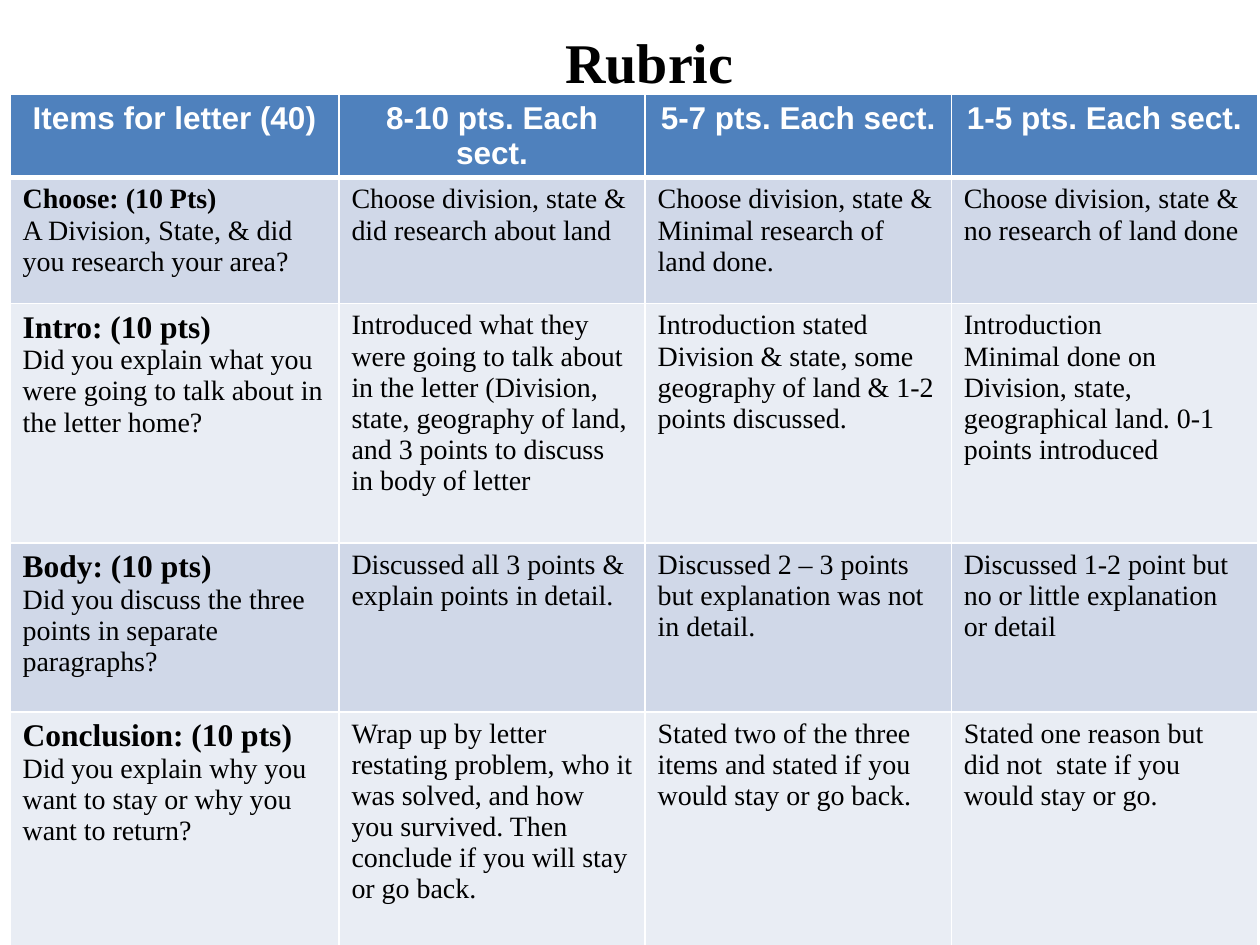
from lxml.etree import SubElement
from pptx import Presentation
from pptx.dml.color import RGBColor
from pptx.enum.text import MSO_ANCHOR as Anchor, PP_ALIGN as Align
from pptx.oxml.ns import qn
from pptx.util import Inches, Pt

SERIF, SANS = "Times New Roman", "Arial"
BLACK, WHITE, BLUE = "000000", "FFFFFF", "4F81BD"
BANDS = ["D0D8E8", "E9EDF4"]

# Table grid, in inches
LEFT, TOP = 0.08, 0.75
COLS = [2.61, 2.43, 2.43, 2.43]
ROWS = [0.45, 1, 1.9, 1.34, 1.9]

HEADS = ["Items for letter (40)", "8-10 pts. Each sect.",
         "5-7 pts. Each sect.", "1-5 pts. Each sect."]

# Each row: item, size of the item, question, then the three grades
ITEMS = [
    ("Choose: (10 Pts)", 16, "A Division, State, & did you research your area?",
     ["Choose division, state & did research about land",
      "Choose division, state & Minimal research of land done.",
      "Choose division, state & no research of land done"]),
    ("Intro: (10 pts)", 18,
     "Did you explain what you were going to talk about in the letter home?",
     ["Introduced what they were going to talk about in the letter (Division, "
      "state, geography of land, and 3 points to discuss in body of letter",
      "Introduction stated Division & state, some geography of land & "
      "1-2 points discussed.",
      "Introduction\nMinimal done on Division, state, geographical land. "
      "0-1 points introduced"]),
    ("Body: (10 pts)", 18,
     "Did you discuss the three points in separate paragraphs?",
     ["Discussed all 3 points & explain points in detail.",
      "Discussed 2 – 3 points but explanation was not in detail.",
      "Discussed 1-2 point but no or little explanation or detail"]),
    ("Conclusion: (10 pts)", 18,
     "Did you explain why you want to stay or why you want to return?",
     ["Wrap up by letter restating problem, who it was solved, and how you "
      "survived. Then conclude if you will stay or go back.",
      "Stated two of the three items and stated if you would stay or go back.",
      "Stated one reason but did not  state if you would stay or go."]),
]


def color(code):
    return RGBColor.from_string(code)


def style(para, size, face=SERIF, ink=BLACK, bold=False, align=Align.LEFT):
    para.alignment = align
    font = para.runs[0].font
    for name, value in dict(size=Pt(size), name=face, bold=bold).items():
        setattr(font, name, value)
    font.color.rgb = color(ink)


def border(cell, base):
    props = cell._tc.get_or_add_tcPr()
    for place, (side, width) in enumerate(dict(L=1, R=1, T=1, B=base).items()):
        line = SubElement(props, qn(f"a:ln{side}"), w=str(Pt(width)))
        fill = SubElement(line, qn("a:solidFill"))
        SubElement(fill, qn("a:srgbClr"), val=WHITE)
        props.insert(place, line)  # lines come before the fill


def fill_cell(cell, text, back, base=1, **look):
    cell.text = text
    for para in cell.text_frame.paragraphs:
        style(para, **look)
    cell.fill.solid()
    cell.fill.fore_color.rgb = color(back)
    border(cell, base)


def add_title(slide):
    title = slide.shapes.title
    spot = dict(left=3.17, top=0.17, width=4.08, height=0.64)
    for name, value in spot.items():
        setattr(title, name, Inches(value))
    frame = title.text_frame
    frame.text = "Rubric "
    frame.vertical_anchor = Anchor.TOP
    style(frame.paragraphs[0], 32, bold=True, align=Align.CENTER)


def add_rubric(slide):
    table = slide.shapes.add_table(
        len(ROWS), len(COLS), Inches(LEFT), Inches(TOP),
        Inches(sum(COLS)), Inches(sum(ROWS))).table
    for col, width in zip(table.columns, COLS):
        col.width = Inches(width)
    for row, height in zip(table.rows, ROWS):
        row.height = Inches(height)

    # Header row
    for c, head in enumerate(HEADS):
        fill_cell(table.cell(0, c), head, BLUE, base=3, size=18, face=SANS,
                  ink=WHITE, bold=True, align=Align.CENTER)

    # Banded rows with a bold item name
    for r, (item, size, ask, grades) in enumerate(ITEMS, 1):
        for c, text in enumerate([f"{item}\n{ask}", *grades]):
            fill_cell(table.cell(r, c), text, BANDS[(r - 1) % 2], size=16)
        style(table.cell(r, 0).text_frame.paragraphs[0], size, bold=True)


def main():
    deck = Presentation()
    deck.slide_width, deck.slide_height = Inches(10), Inches(7.5)
    slide = deck.slides.add_slide(deck.slide_layouts[5])
    add_title(slide)
    add_rubric(slide)
    deck.save("out.pptx")


if __name__ == "__main__":
    main()
